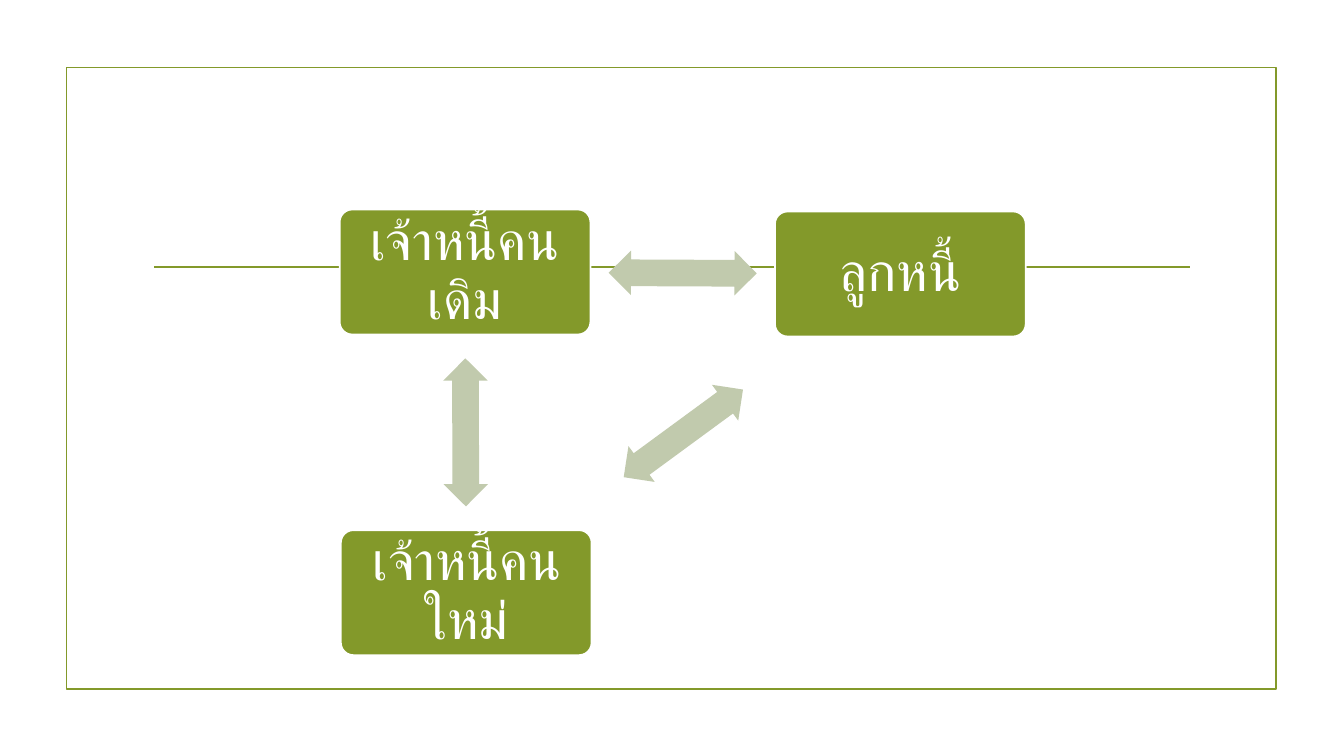
from math import atan2, degrees

from lxml.etree import SubElement
from pptx import Presentation
from pptx.dml.color import RGBColor
from pptx.enum.shapes import MSO_CONNECTOR as Connector, MSO_SHAPE as Shape
from pptx.enum.text import MSO_ANCHOR as Anchor, PP_ALIGN as Align
from pptx.oxml.ns import qn
from pptx.util import Cm, Pt

GREEN, PALE_GREEN, WHITE = "83992A", "C1CAAD", "FFFFFF"
FONT = "Times New Roman"
BOX_WIDTH, BOX_HEIGHT = 6.32, 3.15
ARROW_WIDTH, ARROW_HEIGHT = 3.73, 1.12
# Each party with the left and top of its box, in cycle order
PARTIES = [
    ("เจ้าหนี้คนเดิม", 2.44, 1.75),
    ("ลูกหนี้", 13.41, 1.8),
    ("เจ้าหนี้คนใหม่", 2.47, 9.83),
]


def color(hex_string):
    return RGBColor.from_string(hex_string)


def add_block(slide, kind, left, top, width, height, fill=None, line=None):
    block = slide.shapes.add_shape(kind, Cm(left), Cm(top), Cm(width), Cm(height))
    block.shadow.inherit = False
    if fill:
        block.fill.solid()
        block.fill.fore_color.rgb = color(fill)
    else:
        block.fill.background()
    if line:
        block.line.color.rgb = color(line)
        block.line.width = Pt(1.25)
    else:
        block.line.fill.background()
    return block


def write_text(block, text, size, font_color, inset):
    frame = block.text_frame
    frame.word_wrap = True
    frame.vertical_anchor = Anchor.MIDDLE
    frame.margin_left = frame.margin_right = Cm(inset)
    frame.margin_top = frame.margin_bottom = Cm(inset)
    paragraph = frame.paragraphs[0]
    paragraph.alignment = Align.CENTER
    paragraph.line_spacing = 0.9
    paragraph.space_after = Pt(0.35 * size)
    run = paragraph.add_run()
    run.text = text
    run.font.size = Pt(size)
    run.font.name = FONT
    run.font.color.rgb = color(font_color)
    # Thai glyphs take the complex-script font
    SubElement(run.font._element, qn("a:cs"), typeface=FONT)


def add_frame(slide, left, top, width, height):
    """Outline of the slide with the title rule across it."""
    add_block(slide, Shape.RECTANGLE, left, top, width, height, line=GREEN)
    rule_y = Cm(top + 5.03)
    rule = slide.shapes.add_connector(
        Connector.STRAIGHT, Cm(left + 2.21), rule_y, Cm(left + width - 2.16), rule_y)
    rule.line.color.rgb = color(GREEN)
    rule.line.width = Pt(1.25)
    SubElement(rule._element.spPr, qn("a:effectLst"))


def add_arrow(slide, start, end):
    """Double arrow halfway between two box centres, turned along their line."""
    (start_x, start_y), (end_x, end_y) = start, end
    arrow = add_block(
        slide, Shape.LEFT_RIGHT_ARROW,
        (start_x + end_x - ARROW_WIDTH) / 2, (start_y + end_y - ARROW_HEIGHT) / 2,
        ARROW_WIDTH, ARROW_HEIGHT, fill=PALE_GREEN)
    arrow.adjustments[0] = 0.6
    arrow.adjustments[1] = 0.5
    arrow.rotation = degrees(atan2(end_y - start_y, end_x - start_x)) % 360


def add_cycle(slide, left, top):
    """Boxes of the three parties, with an arrow from each to the next."""
    centres = [(left + x + BOX_WIDTH / 2, top + y + BOX_HEIGHT / 2)
               for _, x, y in PARTIES]
    for index, (party, x, y) in enumerate(PARTIES):
        box = add_block(slide, Shape.ROUNDED_RECTANGLE, left + x, top + y,
                        BOX_WIDTH, BOX_HEIGHT, fill=GREEN, line=WHITE)
        box.adjustments[0] = 0.1
        write_text(box, party, size=39, font_color=WHITE, inset=0.41)
        add_arrow(slide, centres[index], centres[(index + 1) % len(centres)])


def main():
    deck = Presentation()
    deck.slide_width, deck.slide_height = Cm(33.87), Cm(19.05)
    slide = deck.slides.add_slide(deck.slide_layouts[6])
    add_frame(slide, 1.68, 1.7, 30.48, 15.67)
    add_cycle(slide, 6.12, 3.53)
    deck.save("out.pptx")


if __name__ == "__main__":
    main()
